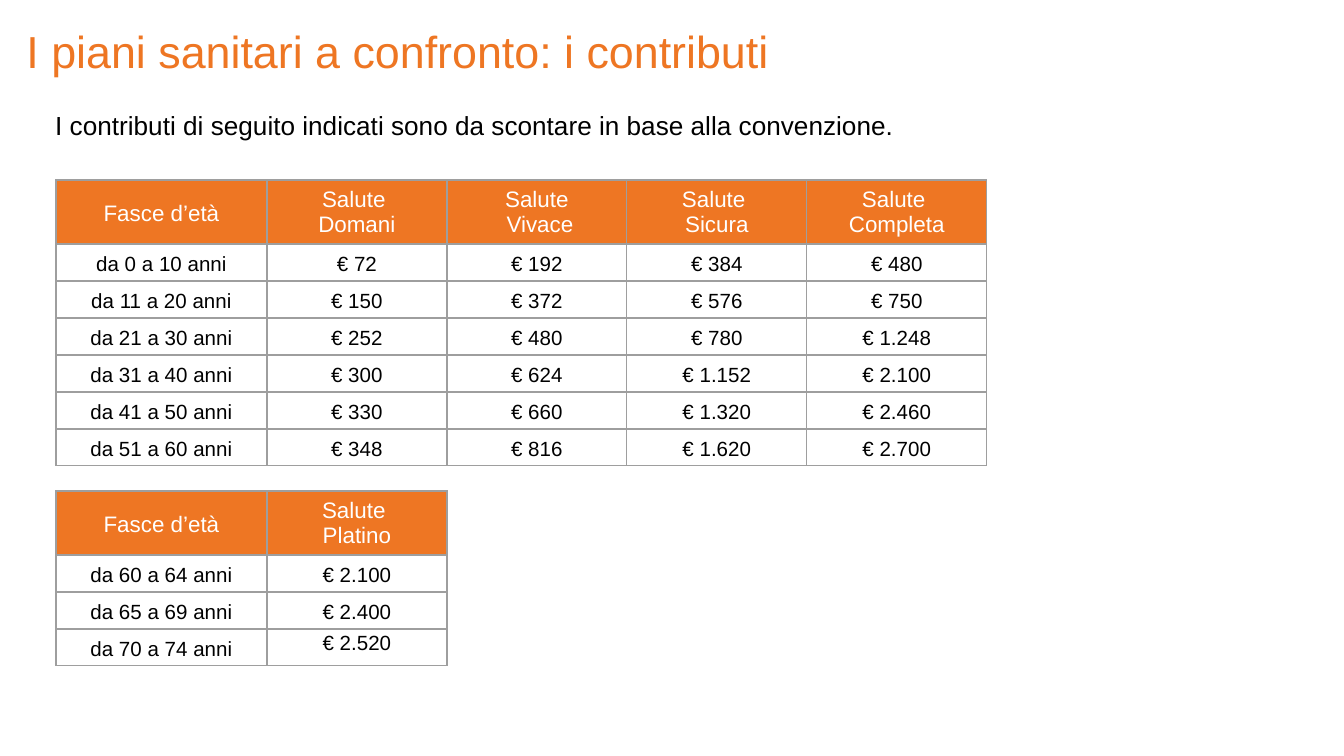
from lxml import etree
from pptx import Presentation
from pptx.dml.color import RGBColor
from pptx.enum.text import MSO_ANCHOR, PP_ALIGN
from pptx.oxml.ns import qn
from pptx.util import Pt

PX = 914400 / 134.4
TOP, MIDDLE, BOTTOM = MSO_ANCHOR.TOP, MSO_ANCHOR.MIDDLE, MSO_ANCHOR.BOTTOM
LEFT, CENTER = PP_ALIGN.LEFT, PP_ALIGN.CENTER
COLORS = {"orange": "EE7623", "black": "000000", "white": "FFFFFF", "grey": "9E9E9E"}

TABLE_LEFT = 56
AGE_WIDTH, PLAN_WIDTH = 211, 180
HEADER_HEIGHT, ROW_HEIGHT = 64, 37
CELL_MARGIN = 9

TABLES = [
    (180, [
        ["Fasce d’età", "Salute \nDomani", "Salute\n Vivace", "Salute \nSicura", "Salute \nCompleta"],
        ["da 0 a 10 anni", "€ 72", "€ 192", "€ 384", "€ 480"],
        ["da 11 a 20 anni", "€ 150", "€ 372", "€ 576", "€ 750"],
        ["da 21 a 30 anni", "€ 252", "€ 480", "€ 780", "€ 1.248"],
        ["da 31 a 40 anni", "€ 300", "€ 624", "€ 1.152", "€ 2.100"],
        ["da 41 a 50 anni", "€ 330", "€ 660", "€ 1.320", "€ 2.460"],
        ["da 51 a 60 anni", "€ 348", "€ 816", "€ 1.620", "€ 2.700"],
    ]),
    (491, [
        ["Fasce d’età", "Salute \nPlatino"],
        ["da 60 a 64 anni", "€ 2.100"],
        ["da 65 a 69 anni", "€ 2.400"],
        ["da 70 a 74 anni", "€ 2.520"],
    ]),
]


def px(length):
    """Convert pixels to EMU."""
    return round(length * PX)


def write(frame, text, size, color, align):
    """Fill a text frame and format every run alike."""
    frame.text = text
    for para in frame.paragraphs:
        para.alignment = align
        for span in para.runs:
            span.font.name = "Arial"
            span.font.size = Pt(size)
            span.font.color.rgb = RGBColor.from_string(COLORS[color])


deck = Presentation()
deck.slide_width, deck.slide_height = px(1344), px(756)
page = deck.slides.add_slide(deck.slide_layouts[5])

title = page.shapes.title
title.left, title.top, title.width, title.height = px(13), px(9), px(1031), px(82)
write(title.text_frame, "I piani sanitari a confronto: i contributi", 24, "orange", LEFT)
title.text_frame.vertical_anchor = BOTTOM
title.text_frame.margin_top = title.text_frame.margin_bottom = px(13)

intro = page.shapes.add_textbox(px(42), px(103), px(985), px(46))
intro.text_frame.word_wrap = True
write(intro.text_frame,
      "I contributi di seguito indicati sono da scontare in base alla convenzione.",
      14, "black", LEFT)

for table_top, rows in TABLES:
    widths = [AGE_WIDTH] + [PLAN_WIDTH] * (len(rows[0]) - 1)
    heights = [HEADER_HEIGHT] + [ROW_HEIGHT] * (len(rows) - 1)
    table = page.shapes.add_table(
        len(rows), len(widths), px(TABLE_LEFT), px(table_top),
        px(sum(widths)), px(sum(heights))).table
    table.first_row = table.horz_banding = False
    for column, width in zip(table.columns, widths):
        column.width = px(width)
    for row, height in zip(table.rows, heights):
        row.height = px(height)

    for row_index, values in enumerate(rows):
        for column_index, value in enumerate(values):
            cell = table.cell(row_index, column_index)
            is_header = row_index == 0
            cell.vertical_anchor = MIDDLE
            cell.margin_left = cell.margin_right = px(CELL_MARGIN)
            cell.margin_top = cell.margin_bottom = 0
            write(cell.text_frame, value, 12 if is_header else 11,
                  "white" if is_header else "black", CENTER)
            if not is_header or column_index == 0:
                para = cell.text_frame.paragraphs[0]
                para.line_spacing = 1.15
                para.space_after = Pt(8 if is_header else 3)

            properties = cell._tc.get_or_add_tcPr()
            for side in ("a:lnL", "a:lnR", "a:lnT", "a:lnB"):
                border = etree.SubElement(properties, qn(side), w=str(Pt(0.75)))
                fill = etree.SubElement(border, qn("a:solidFill"))
                etree.SubElement(fill, qn("a:srgbClr"), val=COLORS["grey"])
            if is_header:
                cell.fill.solid()
                cell.fill.fore_color.rgb = RGBColor.from_string(COLORS["orange"])
            else:
                cell.fill.background()

    if len(widths) == 2:
        table.cell(len(rows) - 1, 1).vertical_anchor = TOP

deck.save("out.pptx")
